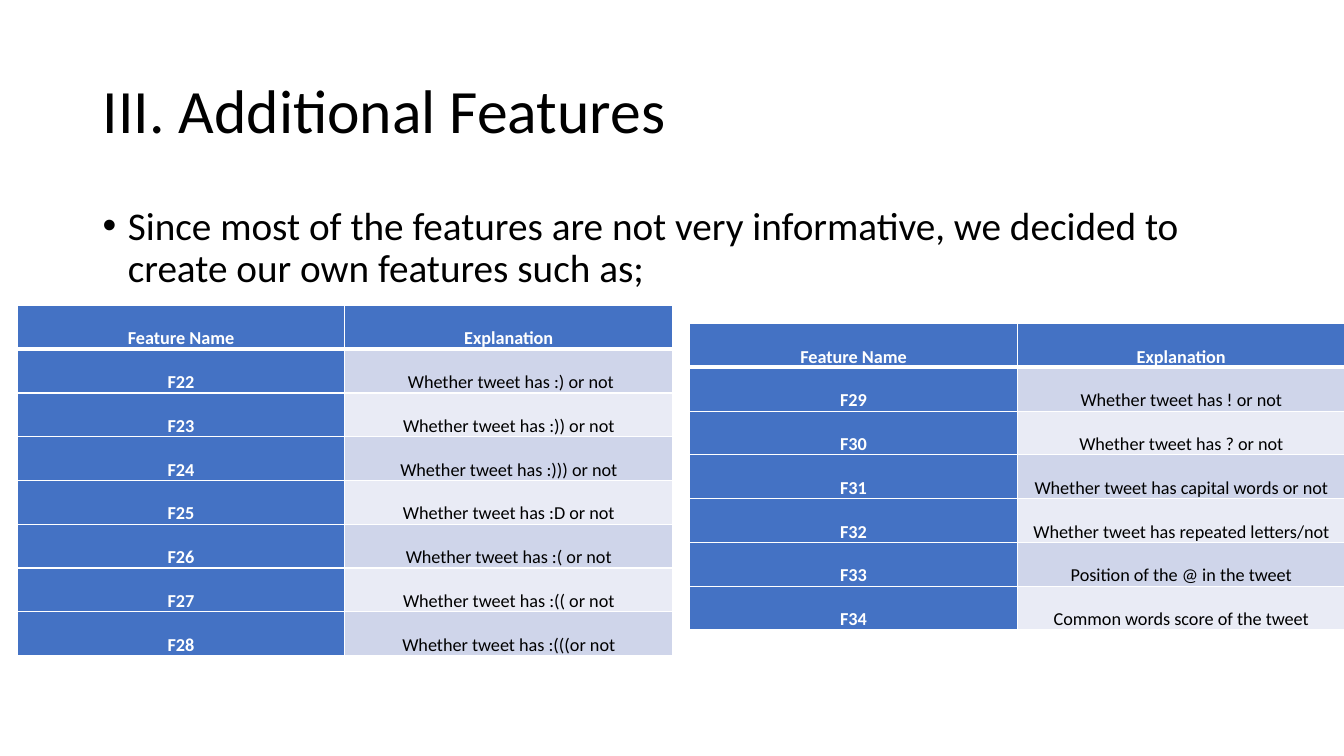
import pptx
import pptx.dml.color
import pptx.enum.text
import pptx.oxml
import pptx.oxml.ns
import pptx.util

TITLE = "III. Additional Features"
INTRO = ("Since most of the features are not very informative, "
         "we decided to create our own features such as;")
HEAD = ("Feature Name", "Explanation")
LEFT = [
    ("F22", " Whether tweet has :) or not"),
    ("F23", "Whether tweet has :)) or not"),
    ("F24", "Whether tweet has :))) or not"),
    ("F25", "Whether tweet has :D or not"),
    ("F26", "Whether tweet has :( or not"),
    ("F27", "Whether tweet has :(( or not"),
    ("F28", "Whether tweet has :(((or not"),
]
RIGHT = [
    ("F29", "Whether tweet has ! or not"),
    ("F30", "Whether tweet has ? or not"),
    ("F31", "Whether tweet has capital words or not"),
    ("F32", "Whether tweet has repeated letters/not"),
    ("F33", "Position of the @ in the tweet"),
    ("F34", "Common words score of the tweet"),
]
TABLES = [(17, 303, LEFT), (684, 321, RIGHT)]  # left, top, rows

FONT = "Calibri"
BLACK, WHITE, BLUE = "000000", "FFFFFF", "4472C4"
BANDS = ("E9EBF5", "CFD5EA")
COL_W, ROW_H = 325, 37
ALIGN = pptx.enum.text.PP_ALIGN
ANCHOR = pptx.enum.text.MSO_ANCHOR


def px(n):
    """Turn px, 100 to the inch, into EMU."""
    return pptx.util.Emu(n * 9144)


def color(code):
    return pptx.dml.color.RGBColor.from_string(code)


def style(para, size, code, bold=False, align=ALIGN.LEFT, lines=0.9):
    para.alignment = align
    para.line_spacing = lines
    for run in para.runs:
        run.font.name = FONT
        run.font.size = pptx.util.Pt(size)
        run.font.bold = bold
        run.font.color.rgb = color(code)


def place(shape, left, top, width, height):
    shape.left, shape.top = px(left), px(top)
    shape.width, shape.height = px(width), px(height)


def bullet(para, indent):
    props = para._p.get_or_add_pPr()
    props.set("marL", str(px(indent)))
    props.set("indent", str(-px(indent)))
    ns = pptx.oxml.ns.nsdecls("a")
    for tag in ('buFont typeface="Arial"', 'buChar char="•"'):
        props.append(pptx.oxml.parse_xml(f"<a:{tag} {ns}/>"))


def border(cell, row):
    """Draw white cell edges, thick between the header and the first row."""
    ns = pptx.oxml.ns.nsdecls("a")
    thick = {0: "B", 1: "T"}.get(row)
    for spot, side in enumerate("LRTB"):
        width = pptx.util.Pt(3 if side == thick else 1)
        line = pptx.oxml.parse_xml(
            f'<a:ln{side} w="{width}" {ns}><a:solidFill>'
            f'<a:srgbClr val="{WHITE}"/></a:solidFill></a:ln{side}>')
        cell._tc.get_or_add_tcPr().insert(spot, line)


def fill_cell(cell, text, row, col):
    strong = row == 0 or col == 0
    cell.margin_left = cell.margin_right = px(7)
    cell.margin_top = cell.margin_bottom = 0
    cell.text_frame.text = text
    style(cell.text_frame.paragraphs[0], 13, WHITE if strong else BLACK,
          strong, ALIGN.CENTER, 2.0)
    cell.fill.solid()
    cell.fill.fore_color.rgb = color(BLUE if strong else BANDS[row % 2])
    border(cell, row)


def add_grid(slide, left, top, rows):
    rows = [HEAD] + rows
    table = slide.shapes.add_table(
        len(rows), len(HEAD), px(left), px(top),
        px(COL_W * len(HEAD)), px(ROW_H * len(rows))).table
    for row, texts in enumerate(rows):
        for col, text in enumerate(texts):
            fill_cell(table.cell(row, col), text, row, col)


def main():
    deck = pptx.Presentation()
    deck.slide_width, deck.slide_height = px(1333), px(750)
    slide = deck.slides.add_slide(deck.slide_layouts[5])

    title = slide.shapes.title
    place(title, 92, 40, 1150, 145)
    frame = title.text_frame
    frame.text = TITLE
    frame.vertical_anchor = ANCHOR.MIDDLE
    frame.auto_size = pptx.enum.text.MSO_AUTO_SIZE.NONE
    style(frame.paragraphs[0], 44, BLACK)

    intro = slide.shapes.add_textbox(px(92), px(200), px(1150), px(476))
    frame = intro.text_frame
    frame.word_wrap = True
    frame.text = INTRO
    para = frame.paragraphs[0]
    style(para, 28, BLACK)
    para.space_before = pptx.util.Pt(10)
    bullet(para, 25)

    for left, top, rows in TABLES:
        add_grid(slide, left, top, rows)
    deck.save("out.pptx")


if __name__ == "__main__":
    main()
